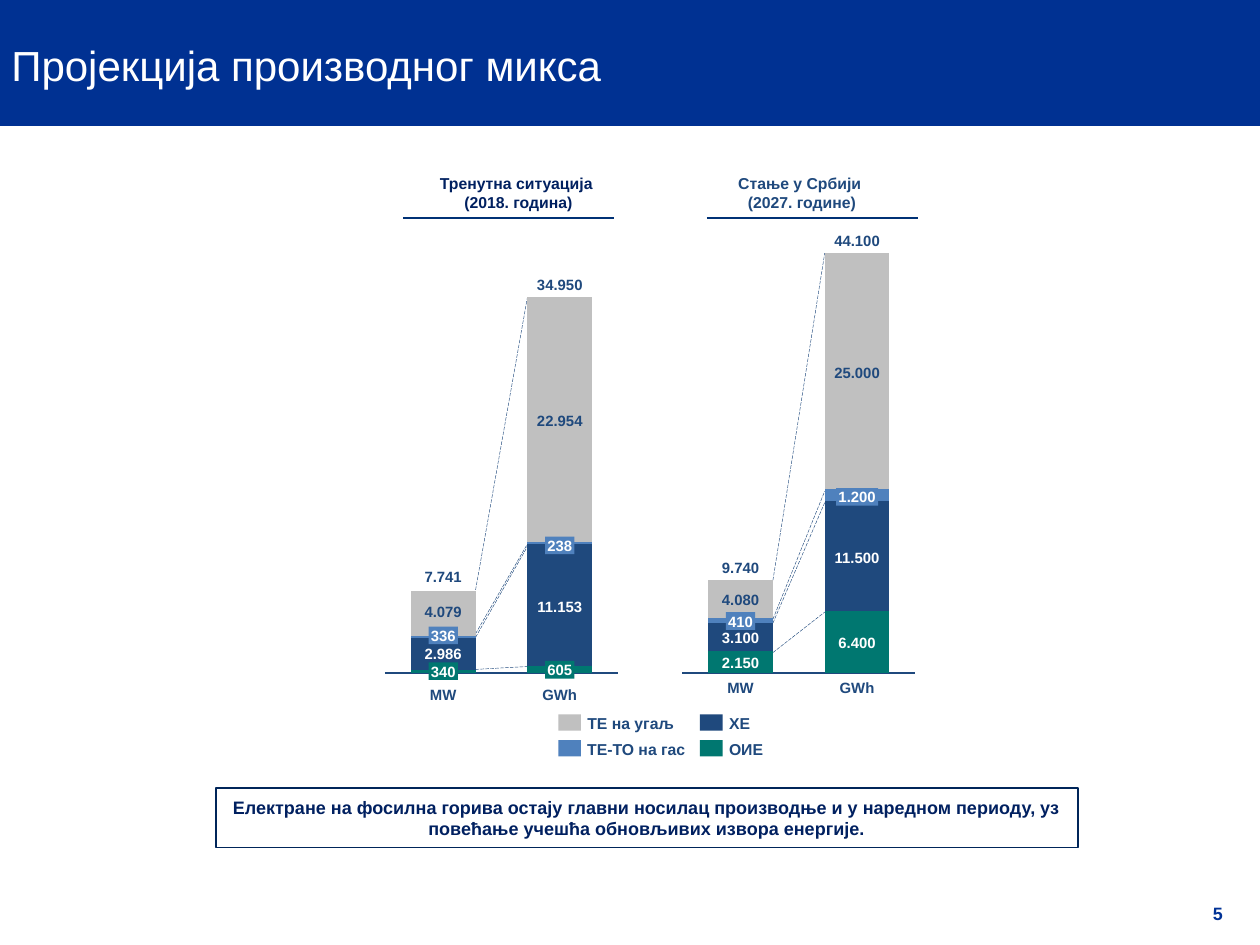
"""Builds the slide on the projected electricity generation mix."""
import itertools

import pptx
import pptx.chart.data
import pptx.dml.color
import pptx.enum.chart
import pptx.enum.dml
import pptx.enum.shapes
import pptx.enum.text
import pptx.oxml
import pptx.oxml.ns
import pptx.util

Pt = pptx.util.Pt
ALIGN = pptx.enum.text.PP_ALIGN
ANCHOR = pptx.enum.text.MSO_ANCHOR
NAVY, BLUE, GREY, WHITE = "002060", "1F497D", "C0C0C0", "FFFFFF"
SOURCES = [("ОИЕ", "007770"), ("ХЕ", BLUE), ("ТЕ-ТО на гас", "4F81BD"), ("ТЕ на угаљ", GREY)]
UNITS = ["MW", "GWh"]
BASELINE = 384.6
CHART_WIDTH, CHART_MARGIN = 146.2, 6.5
PLOT_X, PLOT_WIDTH = 0.045, 0.911
CATEGORY_WIDTH = CHART_WIDTH * PLOT_WIDTH / 2
BAR_WIDTH = CATEGORY_WIDTH / 1.8
LABEL_HEIGHT = 10.1
LABEL_WIDTHS = {3: 16.8, 5: 24, 6: 28.8}
MIXES = [
    dict(heading="Тренутна ситуација \n(2018. година)", heading_box=(242.7, 95.8, 107, 28.8),
         heading_color=NAVY, rule=(230.4, 350.6), left=213.4, top=170, unit_top=391.7,
         capacity=[340, 2986, 336, 4079], energy=[605, 11153, 238, 22954]),
    dict(heading="Стање у Србији \n(2027. године)", heading_box=(413.2, 95.8, 90, 28.8),
         heading_color=BLUE, rule=(403.9, 524.5), left=383.3, top=144.7, unit_top=388.1,
         capacity=[2150, 3100, 410, 4080], energy=[6400, 11500, 1200, 25000]),
]


def rgb(code):
    """Return the colour for a hex string."""
    return pptx.dml.color.RGBColor.from_string(code)


def rectangle(slide, box, fill=None, line=None):
    """Add a rectangle with an optional fill and outline."""
    rect = slide.shapes.add_shape(pptx.enum.shapes.MSO_SHAPE.RECTANGLE, *map(Pt, box))
    rect.shadow.inherit = False
    if fill:
        rect.fill.solid()
        rect.fill.fore_color.rgb = rgb(fill)
    else:
        rect.fill.background()
    if line:
        rect.line.color.rgb = rgb(line)
        rect.line.width = Pt(1)
    else:
        rect.line.fill.background()
    return rect


def text(slide, words, box, size=8.5, color=BLUE, bold=True, align=ALIGN.CENTER,
         anchor=ANCHOR.MIDDLE, insets=(0, 0), wrap=False, fill=None, line=None):
    """Add text in a plain box, or in a rectangle when it has a fill or outline."""
    if fill or line:
        holder = rectangle(slide, box, fill, line)
    else:
        holder = slide.shapes.add_textbox(*map(Pt, box))
    frame = holder.text_frame
    frame.word_wrap = wrap
    frame.vertical_anchor = anchor
    frame.margin_left = frame.margin_right = Pt(insets[0])
    frame.margin_top = frame.margin_bottom = Pt(insets[1])
    frame.text = words
    for paragraph in frame.paragraphs:
        paragraph.alignment = align
        paragraph.font.name = "Arial"
        paragraph.font.size = Pt(size)
        paragraph.font.bold = bold
        paragraph.font.color.rgb = rgb(color)


def rule(slide, start, end, color, width, dashed=False):
    """Add a straight line between two points."""
    connector = slide.shapes.add_connector(
        pptx.enum.shapes.MSO_CONNECTOR.STRAIGHT, *map(Pt, (*start, *end)))
    connector.line.color.rgb = rgb(color)
    connector.line.width = Pt(width)
    if dashed:
        connector.line.dash_style = pptx.enum.dml.MSO_LINE.LONG_DASH
    connector.element.spPr.append(pptx.oxml.parse_xml(
        '<a:effectLst xmlns:a="http://schemas.openxmlformats.org/drawingml/2006/main"/>'))


def place_plot(chart, y, height):
    """Fix the inner plot area as fractions of the chart."""
    parts = zip("xywh", (PLOT_X, y, PLOT_WIDTH, height))
    places = "".join(f'<c:{key} val="{value:.4f}"/>' for key, value in parts)
    layout = pptx.oxml.parse_xml(
        '<c:layout xmlns:c="http://schemas.openxmlformats.org/drawingml/2006/chart">'
        '<c:manualLayout><c:layoutTarget val="inner"/><c:xMode val="edge"/>'
        f'<c:yMode val="edge"/>{places}</c:manualLayout></c:layout>')
    plot_area = chart.element.find(".//" + pptx.oxml.ns.qn("c:plotArea"))
    for old in plot_area.findall(pptx.oxml.ns.qn("c:layout")):
        plot_area.remove(old)
    plot_area.insert(0, layout)


def stacked_chart(slide, mix):
    """Add the stacked columns, scaled so that the largest segment is 100."""
    largest = max(mix["energy"])
    mix_data = pptx.chart.data.CategoryChartData()
    mix_data.categories = UNITS
    for (name, _), *amounts in zip(SOURCES, mix["capacity"], mix["energy"]):
        mix_data.add_series(name, [round(amount / largest * 100) for amount in amounts])
    plot_height = BASELINE - mix["top"]
    height = plot_height + 2 * CHART_MARGIN
    box = (mix["left"], mix["top"] - CHART_MARGIN, CHART_WIDTH, height)
    chart = slide.shapes.add_chart(
        pptx.enum.chart.XL_CHART_TYPE.COLUMN_STACKED, *map(Pt, box), mix_data).chart
    chart.has_legend = chart.has_title = False
    chart.font.name = "Calibri"
    chart.font.size = Pt(10)
    chart.font.color.rgb = rgb(BLUE)
    columns = chart.plots[0]
    columns.gap_width, columns.overlap = 80, 100
    columns.vary_by_categories = False
    for series, (_, color) in zip(columns.series, SOURCES):
        series.format.fill.solid()
        series.format.fill.fore_color.rgb = rgb(color)
    units, amounts = chart.category_axis, chart.value_axis
    units.tick_label_position = pptx.enum.chart.XL_TICK_LABEL_POSITION.NONE
    units.major_tick_mark = units.minor_tick_mark = pptx.enum.chart.XL_TICK_MARK.NONE
    units.format.line.color.rgb = rgb(BLUE)
    units.format.line.width = Pt(0.75)
    amounts.visible = amounts.has_major_gridlines = False
    amounts.minimum_scale = 0
    amounts.maximum_scale = round(sum(mix["energy"]) / largest * 100)
    place_plot(chart, CHART_MARGIN / height, plot_height / height)


def amount_label(slide, amount, center, top, fill=None, **style):
    """Add a number centred over a column, with room to spare when it has no fill."""
    words = f"{amount:,}".replace(",", ".")
    width = LABEL_WIDTHS[len(words)] + (0 if fill else 4)
    text(slide, words, (center - width / 2, top, width, LABEL_HEIGHT), fill=fill, **style)


def generation_mix(slide, mix):
    """Add one year: heading, linked columns and their labels."""
    text(slide, mix["heading"], mix["heading_box"], size=9, color=mix["heading_color"],
         anchor=ANCHOR.TOP, insets=(7.2, 3.6))
    rule(slide, *((x, 124.6) for x in mix["rule"]), "003175", 0.75)
    stacks = [mix["capacity"], mix["energy"]]
    scale = (BASELINE - mix["top"]) / sum(mix["energy"])
    levels = [[BASELINE - total * scale for total in itertools.accumulate(stack, initial=0)]
              for stack in stacks]
    first_center = mix["left"] + CHART_WIDTH * PLOT_X + CATEGORY_WIDTH / 2
    centers = [first_center, first_center + CATEGORY_WIDTH]
    for start, end in list(zip(*levels))[1:]:
        rule(slide, (centers[0] + BAR_WIDTH / 2, start), (centers[1] - BAR_WIDTH / 2, end),
             BLUE, 0.25, dashed=True)
    stacked_chart(slide, mix)
    for unit, stack, edges, center in zip(UNITS, stacks, levels, centers):
        segments = zip(stack, SOURCES, itertools.pairwise(edges))
        for amount, (_, color), (bottom, top) in segments:
            amount_label(slide, amount, center, (bottom + top - LABEL_HEIGHT) / 2,
                         color=BLUE if color == GREY else WHITE,
                         fill=color if bottom - top < LABEL_HEIGHT else None)
        amount_label(slide, sum(stack), center, edges[-1] - 2.2 - LABEL_HEIGHT,
                     anchor=ANCHOR.BOTTOM)
        text(slide, unit, (center - 11, mix["unit_top"], 22, LABEL_HEIGHT), anchor=ANCHOR.TOP)


def legend(slide):
    """Add the legend, two entries in each column."""
    widths = [22, 15, 58, 51]
    places = [(400, 422.9), (400, 408.2), (319, 422.9), (319, 408.2)]
    for (name, color), width, (left, top) in zip(SOURCES, widths, places):
        rectangle(slide, (left, top, 13, 9.4), fill=color)
        text(slide, name, (left + 16.6, top - 0.4, width, 10.8), size=9, align=ALIGN.LEFT)


def main():
    """Build and save the slide."""
    deck = pptx.Presentation()
    deck.slide_width, deck.slide_height = Pt(720), Pt(540)
    slide = deck.slides.add_slide(deck.slide_layouts[6])
    rectangle(slide, (0, 0, 720, 72), fill="003192")
    text(slide, "Пројекција производног микса", (0, 5.8, 680.4, 62.6), size=24, color=WHITE,
         bold=False, align=ALIGN.LEFT, insets=(6.5, 3.6), wrap=True)
    for mix in MIXES:
        generation_mix(slide, mix)
    legend(slide)
    text(slide, "Електране на фосилна горива остају главни носилац производње и у наредном "
         "периоду, уз повећање учешћа обновљивих извора енергије.",
         (123.4, 450.5, 492.5, 33.8), size=10.3, color=NAVY, insets=(7.2, 3.6), wrap=True,
         line="002559")
    text(slide, "5", (677.5, 507.6, 36.7, 28.8), size=10.2, color="003296", wrap=True)
    deck.save("out.pptx")


if __name__ == "__main__":
    main()
